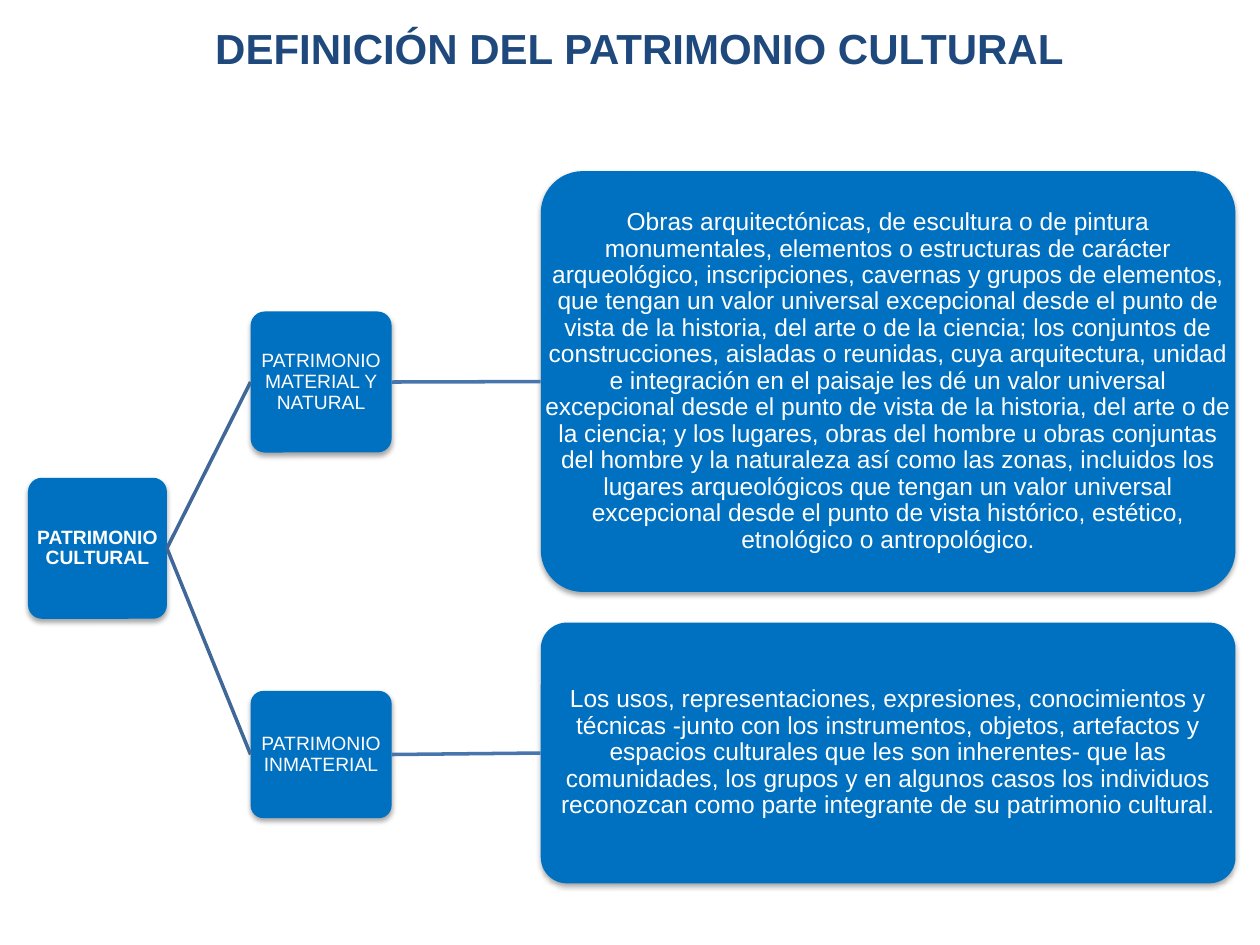
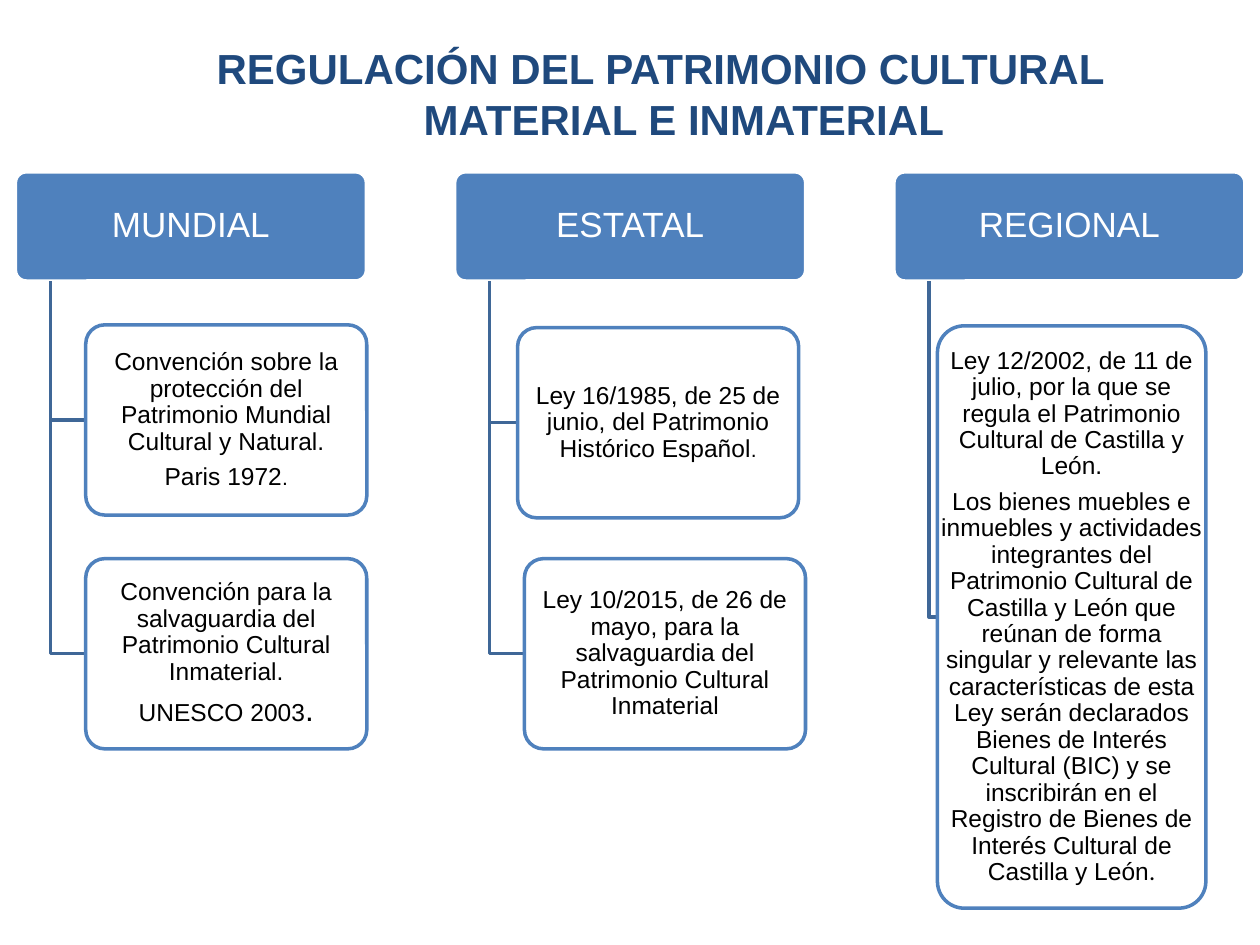
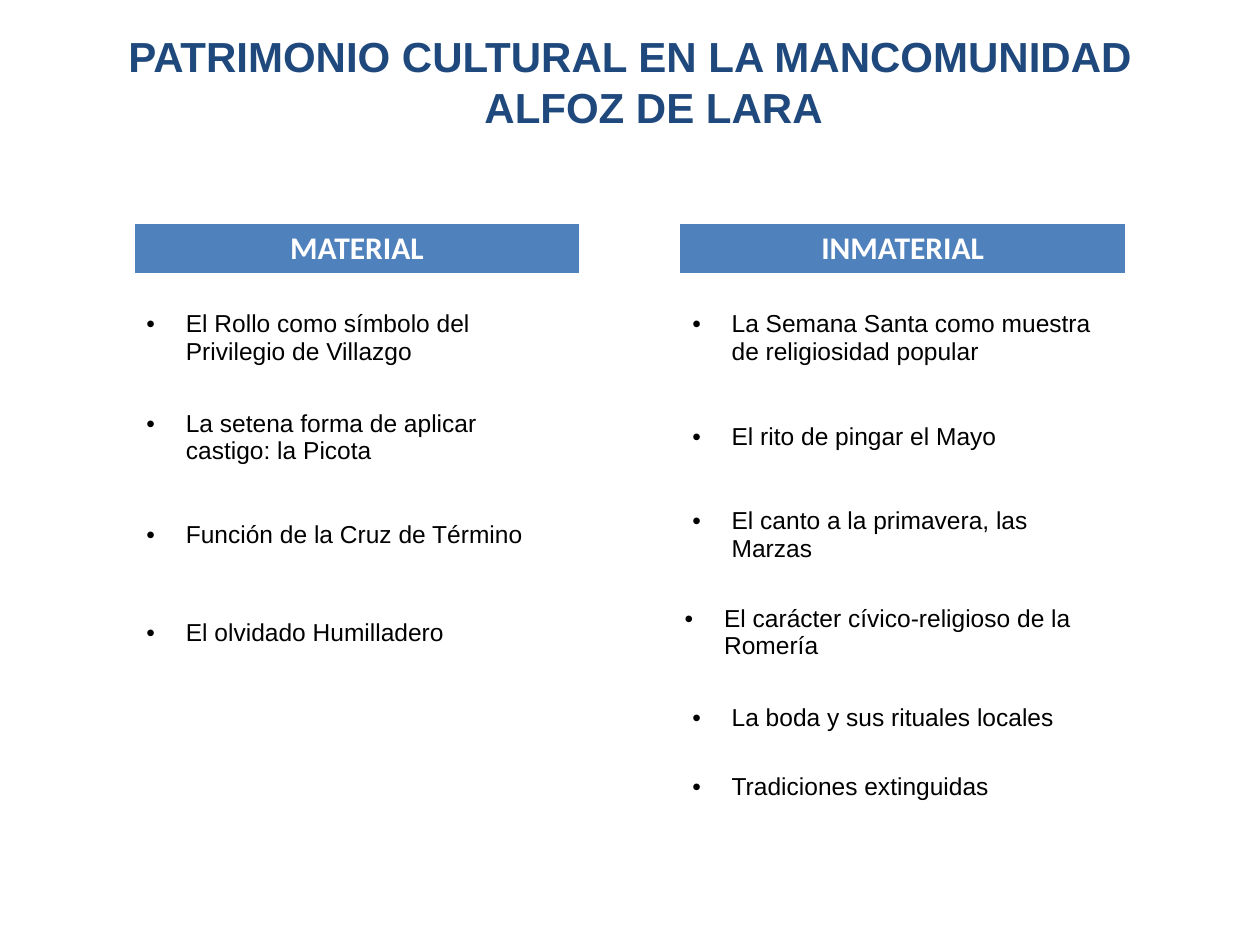
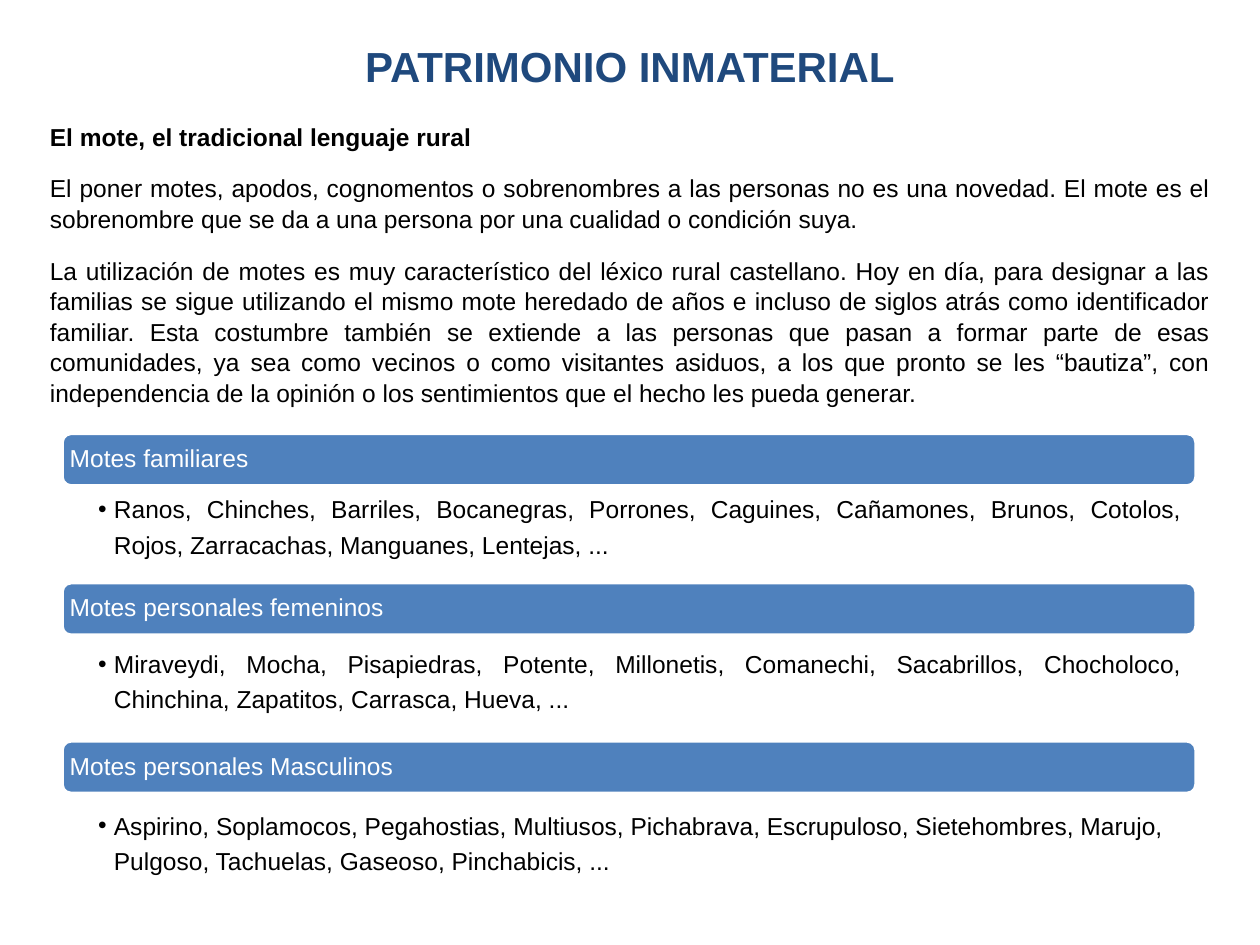
from dataclasses import dataclass
from typing import NamedTuple

from lxml.etree import SubElement
from pptx import Presentation
from pptx.dml.color import RGBColor
from pptx.enum.shapes import MSO_CONNECTOR, MSO_SHAPE
from pptx.enum.text import MSO_ANCHOR, MSO_AUTO_SIZE, PP_ALIGN
from pptx.oxml.ns import qn
from pptx.shapes.autoshape import Shape
from pptx.slide import Slide
from pptx.text.text import TextFrame, _Paragraph
from pptx.util import Pt

WHITE, BLACK = "FFFFFF", "000000"
NAVY, BLUE, STRONG_BLUE = "1F497D", "4F81BD", "0070C0"
BRANCH, TWIG = "3F6797", "4875AC"
BODY_SIZE = 14
EMPTY_LINE = 16


class Box(NamedTuple):
    left: float
    top: float
    width: float
    height: float

    def lengths(self) -> list[Pt]:
        return [Pt(value) for value in self]


class Run(NamedTuple):
    text: str
    size: float = BODY_SIZE
    bold: bool = False
    font: str = "Arial"


class Layout(NamedTuple):
    """Paragraph settings; left and first are the indents."""
    align: PP_ALIGN = PP_ALIGN.LEFT
    before: float = 0
    after: float = 0
    spacing: float | Pt | None = None
    left: float = 0
    first: float = 0
    bullet: bool = False


@dataclass
class Card:
    """Rounded box; overlaid text keeps the full width despite the corners."""
    box: Box
    paragraphs: list[list[Run]]
    fill: str
    ink: str
    line: str | None = None
    inset: float = 1
    align: PP_ALIGN = PP_ALIGN.CENTER
    corner: float = 0.1
    shadowed: bool = False
    overlaid: bool = False


class Column(NamedTuple):
    heading: str
    rules: list[tuple[Box, list[list[Run]]]]


class Nicknames(NamedTuple):
    heading: str
    bar_top: float
    names: str
    names_top: float
    align: PP_ALIGN = PP_ALIGN.JUSTIFY


TITLE_HANGING = Layout(PP_ALIGN.CENTER, before=4.8, left=27, first=-27)
TABLE_BULLET = Layout(left=22.5, first=-22.5, bullet=True)


def rgb(color: str) -> RGBColor:
    return RGBColor.from_string(color)


def write(paragraph: _Paragraph, runs: list[Run], ink: str, layout: Layout) -> None:
    paragraph.alignment = layout.align
    paragraph.space_before = Pt(layout.before)
    paragraph.space_after = Pt(layout.after)
    if layout.spacing:
        paragraph.line_spacing = layout.spacing
    properties = paragraph._p.get_or_add_pPr()
    properties.set("marL", str(Pt(layout.left)))
    properties.set("indent", str(Pt(layout.first)))
    if layout.bullet:
        SubElement(properties, qn("a:buFont"), typeface="Arial")
        SubElement(properties, qn("a:buChar"), char="•")
    for part in runs:
        run = paragraph.add_run()
        run.text = part.text
        run.font.size = Pt(part.size)
        run.font.bold = part.bold
        run.font.name = part.font
        run.font.color.rgb = rgb(ink)


def prepare(frame: TextFrame, anchor: MSO_ANCHOR, insets: tuple[float, ...]) -> None:
    frame.word_wrap = True
    frame.auto_size = MSO_AUTO_SIZE.NONE
    frame.vertical_anchor = anchor
    (frame.margin_left, frame.margin_top,
     frame.margin_right, frame.margin_bottom) = [Pt(value) for value in insets]


def next_paragraph(frame: TextFrame, index: int) -> _Paragraph:
    return frame.add_paragraph() if index else frame.paragraphs[0]


def add_titled_slide(deck: Presentation, title: str, box: Box, anchor: MSO_ANCHOR,
                     layout: Layout = TITLE_HANGING) -> Slide:
    slide = deck.slides.add_slide(deck.slide_layouts[5])
    heading = slide.shapes.title
    heading.left, heading.top, heading.width, heading.height = box.lengths()
    prepare(heading.text_frame, anchor, (7.2, 3.6, 7.2, 3.6))
    write(heading.text_frame.paragraphs[0], [Run(title, 24, True)], NAVY, layout)
    return slide


def add_card(slide: Slide, card: Card) -> Shape:
    shape = slide.shapes.add_shape(MSO_SHAPE.ROUNDED_RECTANGLE, *card.box.lengths())
    shape.adjustments[0] = card.corner
    shape.fill.solid()
    shape.fill.fore_color.rgb = rgb(card.fill)
    if card.line:
        shape.line.color.rgb = rgb(card.line)
        shape.line.width = Pt(2)
    else:
        shape.line.fill.background()
    shape.shadow.inherit = False
    if card.shadowed:
        effects = shape._element.spPr.find(qn("a:effectLst"))
        shadow = SubElement(effects, qn("a:outerShdw"), blurRad=str(Pt(3.1)),
                            dist=str(Pt(1.8)), dir="5400000", rotWithShape="0")
        shade = SubElement(shadow, qn("a:srgbClr"), val=BLACK)
        SubElement(shade, qn("a:alpha"), val="35000")

    holder = slide.shapes.add_textbox(*card.box.lengths()) if card.overlaid else shape
    frame = holder.text_frame
    prepare(frame, MSO_ANCHOR.MIDDLE, (card.inset,) * 4)
    for index, runs in enumerate(card.paragraphs):
        layout = Layout(card.align, after=0.35 * runs[0].size, spacing=0.9)
        write(next_paragraph(frame, index), runs, card.ink, layout)
    return shape


def link(slide: Slide, source: Shape, target: Shape, color: str) -> None:
    connector = slide.shapes.add_connector(MSO_CONNECTOR.STRAIGHT, 0, 0, 0, 0)
    connector.begin_connect(source, 3)
    connector.end_connect(target, 1)
    connector.line.color.rgb = rgb(color)
    connector.line.width = Pt(2)
    SubElement(connector._element.spPr, qn("a:effectLst"))


def add_elbow(slide: Slide, trunk: float, top: float, target: Box) -> None:
    middle = target.top + target.height / 2
    builder = slide.shapes.build_freeform(Pt(trunk), Pt(top))
    builder.add_line_segments(
        [(Pt(trunk), Pt(middle)), (Pt(target.left), Pt(middle))], close=False)
    elbow = builder.convert_to_shape()
    elbow.fill.background()
    elbow.line.color.rgb = rgb(BRANCH)
    elbow.line.width = Pt(2)
    elbow.shadow.inherit = False


def build_definition(deck: Presentation) -> None:
    slide = add_titled_slide(deck, "DEFINICIÓN DEL PATRIMONIO CULTURAL",
                             Box(36.7, 9.4, 657.4, 36), MSO_ANCHOR.TOP,
                             Layout(PP_ALIGN.CENTER))

    def node(box: Box, run: Run, overlaid: bool = False) -> Shape:
        return add_card(slide, Card(box, [[run]], STRONG_BLUE, WHITE,
                                    shadowed=True, overlaid=overlaid))

    heritage = node(Box(16, 273, 79.4, 80.6), Run("PATRIMONIO CULTURAL", 11, True))
    branches = [
        (Box(143.2, 178, 80.6, 80.6), "PATRIMONIO MATERIAL Y NATURAL",
         Box(309, 97.8, 397, 240.5),
         "Obras arquitectónicas, de escultura o de pintura monumentales, elementos o "
         "estructuras de carácter arqueológico, inscripciones, cavernas y grupos de "
         "elementos, que tengan un valor universal excepcional desde el punto de vista "
         "de la historia, del arte o de la ciencia; los conjuntos de construcciones, "
         "aisladas o reunidas, cuya arquitectura, unidad e integración en el paisaje les "
         "dé un valor universal excepcional desde el punto de vista de la historia, del "
         "arte o de la ciencia; y los lugares, obras del hombre u obras conjuntas del "
         "hombre y la naturaleza así como las zonas, incluidos los lugares arqueológicos "
         "que tengan un valor universal excepcional desde el punto de vista histórico, "
         "estético, etnológico o antropológico."),
        (Box(143.2, 394.8, 80.6, 72.7), "PATRIMONIO INMATERIAL",
         Box(309, 355.8, 397, 149),
         "Los usos, representaciones, expresiones, conocimientos y técnicas -junto con "
         "los instrumentos, objetos, artefactos y espacios culturales que les son "
         "inherentes- que las comunidades, los grupos y en algunos casos los individuos "
         "reconozcan como parte integrante de su patrimonio cultural."),
    ]
    for kind_box, kind_name, meaning_box, meaning_text in branches:
        kind = node(kind_box, Run(kind_name, 11))
        meaning = node(meaning_box, Run(meaning_text), overlaid=True)
        link(slide, heritage, kind, BRANCH)
        link(slide, kind, meaning, TWIG)


def build_regulation(deck: Presentation) -> None:
    slide = add_titled_slide(
        deck, "REGULACIÓN DEL PATRIMONIO CULTURAL MATERIAL E INMATERIAL",
        Box(54, 20.9, 646.6, 65.5), MSO_ANCHOR.TOP)
    rule_size = (160.6, 108.7)
    columns = [
        Column("MUNDIAL", [
            (Box(49, 185.6, *rule_size),
             [[Run("Convención sobre la protección del Patrimonio Mundial Cultural y "
                   "Natural.")],
              [Run("Paris 1972"), Run(".", 12)]]),
            (Box(49, 319.2, *rule_size),
             [[Run("Convención para la salvaguardia del Patrimonio Cultural "
                   "Inmaterial.")],
              [Run("UNESCO 2003"), Run(".", 18)]]),
        ]),
        Column("ESTATAL", [
            (Box(295.8, 187.2, *rule_size),
             [[Run("Ley 16/1985, de 25 de junio, del Patrimonio Histórico Español"),
               Run(".", 12)]]),
            (Box(299.7, 319.2, *rule_size),
             [[Run("Ley 10/2015, de 26 de mayo, para la salvaguardia del Patrimonio "
                   "Cultural Inmaterial")]]),
        ]),
        Column("REGIONAL", [
            (Box(535.7, 186.2, 153.4, 332.8),
             [[Run("Ley 12/2002, de 11 de julio, por la que se regula el Patrimonio "
                   "Cultural de Castilla y León.")],
              [Run("Los bienes muebles e inmuebles y actividades integrantes del "
                   "Patrimonio Cultural de Castilla y León que reúnan de forma singular "
                   "y relevante las características de esta Ley serán declarados Bienes "
                   "de Interés Cultural (BIC) y se inscribirán en el Registro de Bienes "
                   "de Interés Cultural de Castilla y León"),
               Run(".", font="Calibri")]]),
        ]),
    ]
    for index, column in enumerate(columns):
        heading = Box(8.8 + 251 * index, 98.2, 200.6, 62.4)
        add_card(slide, Card(heading, [[Run(column.heading, 20)]], BLUE, WHITE, WHITE, 2))
        for box, paragraphs in column.rules:
            add_elbow(slide, heading.left + 20, heading.top + heading.height, box)
            add_card(slide, Card(box, paragraphs, WHITE, BLACK, BLUE, 2, overlaid=True))


def build_heritage_list(deck: Presentation) -> None:
    slide = add_titled_slide(
        deck, "PATRIMONIO CULTURAL EN LA MANCOMUNIDAD ALFOZ DE LARA",
        Box(36, 21.6, 648, 49.7), MSO_ANCHOR.MIDDLE)
    headings = ("MATERIAL", "", "INMATERIAL")
    customs = [
        ("El Rollo como símbolo del Privilegio de Villazgo", "",
         "La Semana Santa como muestra de religiosidad popular"),
        ("La setena forma de aplicar castigo: la Picota", "", "El rito de pingar el Mayo"),
        ("Función de la Cruz de Término", "", "El canto a la primavera, las Marzas"),
        ("El olvidado Humilladero", "", "El carácter cívico-religioso de la Romería"),
        ("", "", "La boda y sus rituales locales"),
        ("", "", "Tradiciones extinguidas"),
    ]
    widths = (254.9, 57, 254.9)
    heights = (22.3, 56.9, 56.9, 53.3, 56.9, 40.3, 33.8)
    table = slide.shapes.add_table(
        len(heights), len(widths),
        *Box(76.5, 127.4, sum(widths), sum(heights)).lengths()).table
    table.first_row = table.horz_banding = False
    for column, width in zip(table.columns, widths):
        column.width = Pt(width)
    for row, height in zip(table.rows, heights):
        row.height = Pt(height)

    for row_index, texts in enumerate([headings, *customs]):
        for column_index, text in enumerate(texts):
            cell = table.cell(row_index, column_index)
            cell.fill.solid()
            is_heading = row_index == 0 and bool(text)
            cell.fill.fore_color.rgb = rgb(BLUE if is_heading else WHITE)
            if not text:
                continue
            paragraph = cell.text_frame.paragraphs[0]
            if is_heading:
                write(paragraph, [Run(text, 18, True, "Calibri")], WHITE,
                      Layout(PP_ALIGN.CENTER))
            else:
                cell.vertical_anchor = MSO_ANCHOR.MIDDLE
                cell.margin_top = Pt(3.6 + EMPTY_LINE)
                write(paragraph, [Run(text)], BLACK, TABLE_BULLET)
    procession = table.cell(4, 2)
    procession.margin_left = procession.margin_right = procession.margin_bottom = Pt(2.9)
    procession.margin_top = Pt(2.9 + EMPTY_LINE)


def build_nicknames(deck: Presentation) -> None:
    slide = add_titled_slide(deck, "PATRIMONIO INMATERIAL", Box(36, 9.4, 648, 56.2),
                             MSO_ANCHOR.MIDDLE, Layout(PP_ALIGN.CENTER))
    intro = slide.shapes.add_textbox(*Box(21.4, 65.5, 677.4, 172.8).lengths()).text_frame
    prepare(intro, MSO_ANCHOR.TOP, (7.2, 3.6, 7.2, 3.6))
    explanation = Layout(PP_ALIGN.JUSTIFY, before=12, spacing=1.04)
    passages = [
        (Run("El mote, el tradicional lenguaje rural", bold=True), Layout(spacing=1.04)),
        (Run("El poner motes, apodos, cognomentos o sobrenombres a las personas no es una "
             "novedad. El mote es el sobrenombre que se da a una persona por una cualidad "
             "o condición suya."), explanation),
        (Run("La utilización de motes es muy característico del léxico rural castellano. "
             "Hoy en día, para designar a las familias se sigue utilizando el mismo mote "
             "heredado de años e incluso de siglos atrás como identificador familiar. "
             "Esta costumbre también se extiende a las personas que pasan a formar parte "
             "de esas comunidades, ya sea como vecinos o como visitantes asiduos, a los "
             "que pronto se les “bautiza”, con independencia de la opinión o los "
             "sentimientos que el hecho les pueda generar."), explanation),
    ]
    for index, (run, layout) in enumerate(passages):
        write(next_paragraph(intro, index), [run], BLACK, layout)

    groups = [
        Nicknames("Motes familiares", 247.7,
                  "Ranos, Chinches, Barriles, Bocanegras, Porrones, Caguines, Cañamones, "
                  "Brunos, Cotolos, Rojos, Zarracachas, Manguanes, Lentejas, ...", 278),
        Nicknames("Motes personales femeninos", 333,
                  "Miraveydi, Mocha, Pisapiedras, Potente, Millonetis, Comanechi, "
                  "Sacabrillos, Chocholoco, Chinchina, Zapatitos, Carrasca, Hueva, ...",
                  366.5),
        Nicknames("Motes personales Masculinos", 423.4,
                  "Aspirino, Soplamocos, Pegahostias, Multiusos, Pichabrava, Escrupuloso, "
                  "Sietehombres, Marujo, Pulgoso, Tachuelas, Gaseoso, Pinchabicis, ...",
                  458.6, PP_ALIGN.LEFT),
    ]
    left, width = 35.5, 648
    for group in groups:
        add_card(slide, Card(Box(left, group.bar_top, width, 30), [[Run(group.heading)]],
                             BLUE, WHITE, WHITE, 2.9, PP_ALIGN.LEFT, corner=0.17))
        names = slide.shapes.add_textbox(
            *Box(left, group.names_top, width, 56).lengths()).text_frame
        prepare(names, MSO_ANCHOR.TOP, (20.6, 1.4, 8, 1.4))
        write(names.paragraphs[0], [Run(group.names)], BLACK,
              Layout(group.align, after=2.8, spacing=Pt(20), left=9, first=-9, bullet=True))


def main() -> None:
    deck = Presentation()
    deck.slide_width, deck.slide_height = Pt(720), Pt(540)
    build_definition(deck)
    build_regulation(deck)
    build_heritage_list(deck)
    build_nicknames(deck)
    deck.save("out.pptx")


if __name__ == "__main__":
    main()
